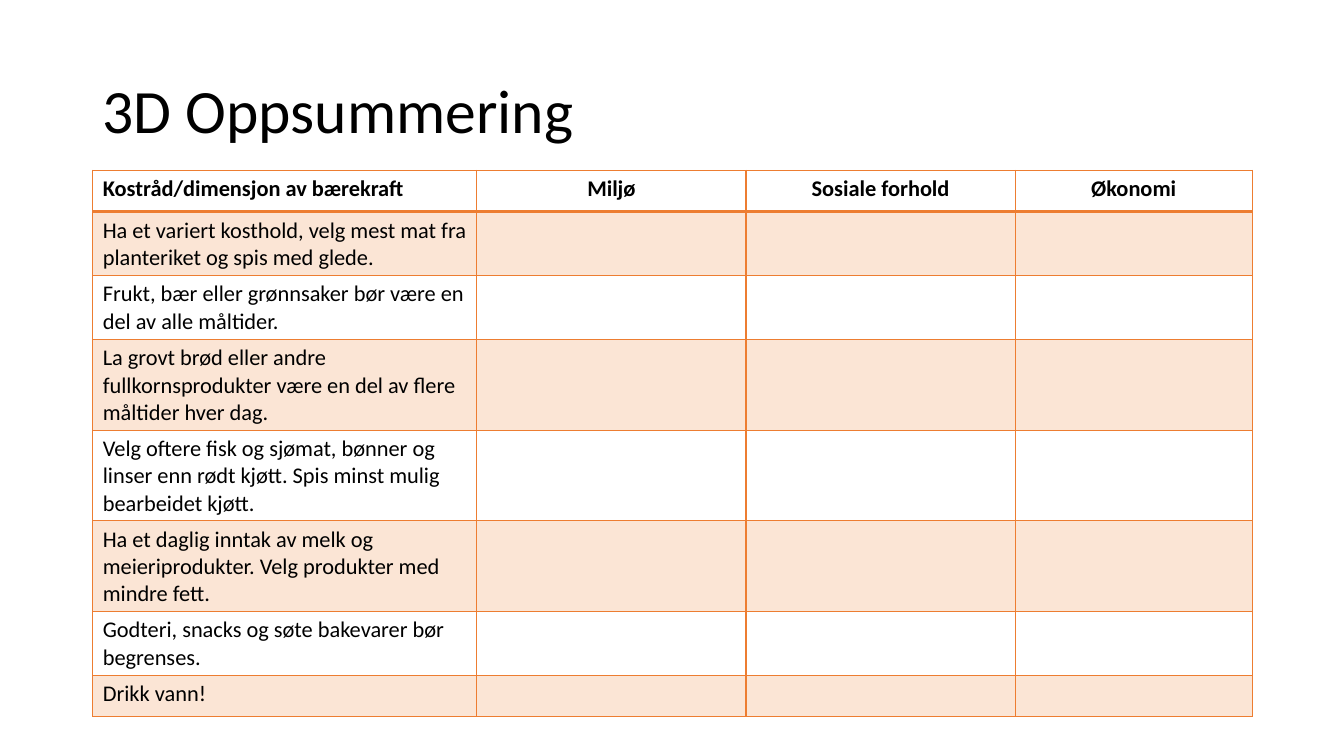
from lxml import etree
from pptx import Presentation
from pptx.dml.color import RGBColor
from pptx.enum.text import MSO_ANCHOR, PP_ALIGN
from pptx.oxml.ns import qn
from pptx.util import Inches, Pt

MIDDLE = MSO_ANCHOR.MIDDLE
LEFT, CENTER = PP_ALIGN.LEFT, PP_ALIGN.CENTER
BLACK = RGBColor(0x00, 0x00, 0x00)
ORANGE = RGBColor(0xED, 0x7D, 0x31)
FONT = "Calibri"
PLAIN_TABLE = "{2D5ABB26-0587-4C30-8999-92F81FD0307C}"

MARGIN, CONTENT_WIDTH = 0.92, 11.5
TITLE_TOP, TITLE_HEIGHT = 0.4, 1.45
TABLE_TOP, TABLE_HEIGHT = 1.69, 5.41
COLUMN_WIDTHS = [3.81, 2.67, 2.67, 2.35]
ROW_HEIGHT = 0.41
BAND_OPACITY = 20

HEADINGS = ["Kostråd/dimensjon av bærekraft", "Miljø", "Sosiale forhold", "Økonomi"]
DIETARY_ADVICE = [
    "Ha et variert kosthold, velg mest mat fra planteriket og spis med glede.",
    "Frukt, bær eller grønnsaker bør være en del av alle måltider.",
    "La grovt brød eller andre fullkornsprodukter være en del av flere måltider hver dag.",
    "Velg oftere fisk og sjømat, bønner og linser enn rødt kjøtt. Spis minst mulig bearbeidet kjøtt.",
    "Ha et daglig inntak av melk og meieriprodukter. Velg produkter med mindre fett.",
    "Godteri, snacks og søte bakevarer bør begrenses.",
    "Drikk vann!",
]


def write(text_frame, wording, size, bold=False, align=LEFT):
    text_frame.text = wording
    paragraph = text_frame.paragraphs[0]
    paragraph.alignment = align
    for run in paragraph.runs:
        run.font.name = FONT
        run.font.size = Pt(size)
        run.font.bold = bold
        run.font.color.rgb = BLACK
    return paragraph


def add_title(slide, wording):
    title = slide.shapes.add_textbox(
        Inches(MARGIN), Inches(TITLE_TOP), Inches(CONTENT_WIDTH), Inches(TITLE_HEIGHT)
    ).text_frame
    title.word_wrap = True
    title.vertical_anchor = MIDDLE
    write(title, wording, 44).line_spacing = 0.9


def set_borders(cell, bottom_width):
    properties = cell._tc.get_or_add_tcPr()
    for side, width in (("L", 1), ("R", 1), ("T", 1), ("B", bottom_width)):
        line = etree.SubElement(properties, qn(f"a:ln{side}"), w=str(Pt(width)))
        fill = etree.SubElement(line, qn("a:solidFill"))
        etree.SubElement(fill, qn("a:srgbClr"), val=str(ORANGE))


def set_band(cell, shaded):
    if not shaded:
        cell.fill.background()
        return
    cell.fill.solid()
    cell.fill.fore_color.rgb = ORANGE
    color = cell._tc.tcPr.find(f"{qn('a:solidFill')}/{qn('a:srgbClr')}")
    etree.SubElement(color, qn("a:alpha"), val=str(BAND_OPACITY * 1000))


def add_advice_table(slide):
    frame = slide.shapes.add_table(
        len(DIETARY_ADVICE) + 1, len(HEADINGS),
        Inches(MARGIN), Inches(TABLE_TOP), Inches(CONTENT_WIDTH), Inches(TABLE_HEIGHT),
    )
    table = frame.table
    table.first_row = table.horz_banding = False
    table._tbl.tblPr.find(qn("a:tableStyleId")).text = PLAIN_TABLE
    for column, width in zip(table.columns, COLUMN_WIDTHS):
        column.width = Inches(width)
    for row_number, row in enumerate(table.rows):
        row.height = Inches(ROW_HEIGHT)
        for cell in row.cells:
            set_borders(cell, 2 if row_number == 0 else 1)
            set_band(cell, row_number % 2 == 1)
    frame.height = Inches(TABLE_HEIGHT)

    for column_number, heading in enumerate(HEADINGS):
        align = CENTER if column_number else LEFT
        write(table.cell(0, column_number).text_frame, heading, 16, True, align)
    for row_number, advice in enumerate(DIETARY_ADVICE, 1):
        write(table.cell(row_number, 0).text_frame, advice, 16)


def main():
    presentation = Presentation()
    presentation.slide_width = Inches(13.33)
    presentation.slide_height = Inches(7.5)
    slide = presentation.slides.add_slide(presentation.slide_layouts[6])
    add_title(slide, "3D Oppsummering")
    add_advice_table(slide)
    presentation.save("out.pptx")


if __name__ == "__main__":
    main()
